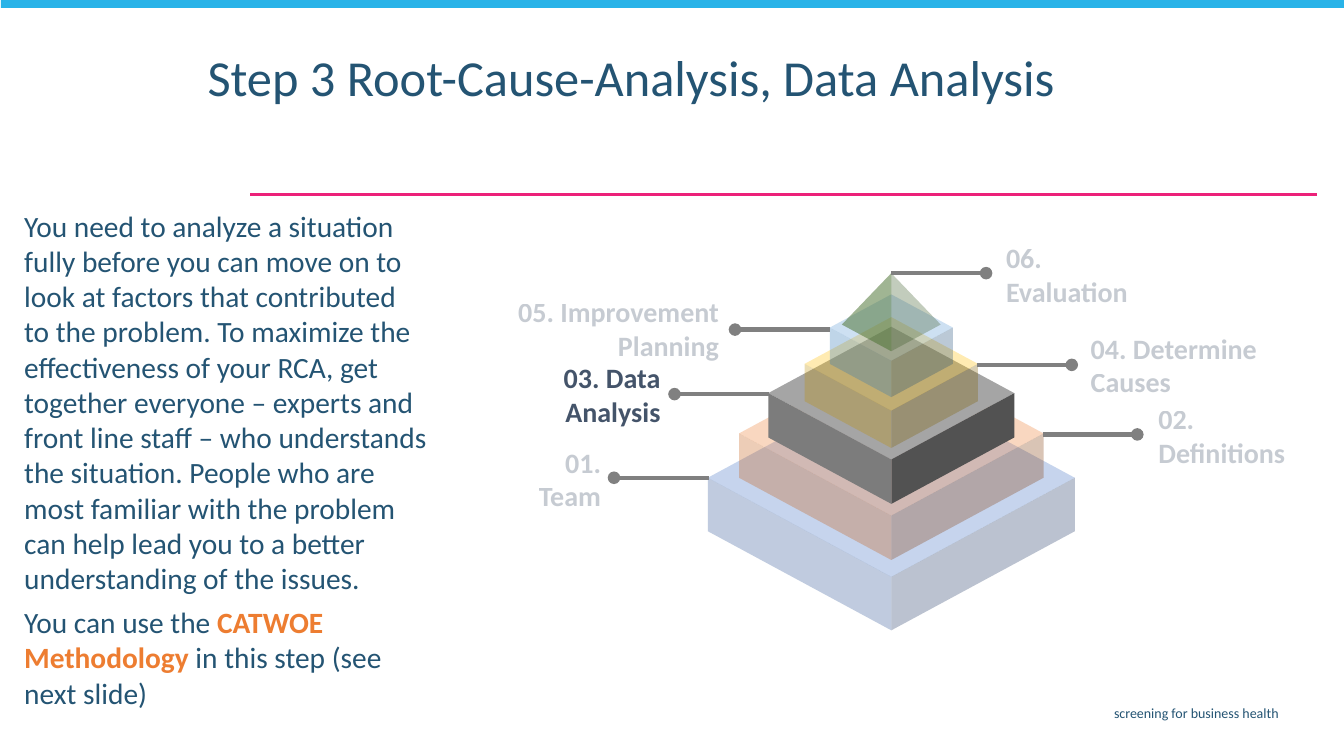
from dataclasses import dataclass

from lxml.etree import SubElement
from pptx import Presentation
from pptx.dml.color import RGBColor
from pptx.enum.shapes import MSO_CONNECTOR as Connector, MSO_SHAPE as Shape
from pptx.enum.text import MSO_ANCHOR as Anchor, PP_ALIGN as Align
from pptx.oxml.ns import qn
from pptx.util import Inches, Pt


@dataclass(frozen=True)
class Theme:
    font: str = "Calibri"
    text: str = "245473"
    accent: str = "ED7D31"
    label: str = "44546A"
    leader: str = "808080"
    bar: str = "29B3E8"
    rule: str = "EC2179"
    apex_front: str = "385723"
    apex_left: str = "548235"
    title_size: int = 36
    body_size: int = 21
    label_size: int = 20
    footer_size: int = 10
    faded: int = 30


@dataclass(frozen=True)
class Layer:
    """One block of the pyramid; half is half its width, middle the height of its side corners."""
    half: float
    middle: float
    depth: float
    top: str
    right: str
    left: str
    opacity: int = 30


@dataclass(frozen=True)
class Callout:
    """A leader starting at offset from the axis, and the label at its far end."""
    text: str
    offset: float
    y: float
    left: float
    top: float
    width: float
    opacity: int = 30


THEME = Theme()
AXIS = 8.84
SLOPE = 0.54
LEADER_LENGTH = 0.94
APEX_TOP, APEX_MIDDLE, APEX_HALF = 2.71, 3.22, 0.49

LAYERS = [
    Layer(1.82, 4.74, 0.53, "4472C4", "203864", "2F5597"),
    Layer(1.51, 4.30, 0.44, "ED7D31", "843C0B", "C55A11"),
    Layer(1.22, 3.90, 0.44, "A5A5A5", "525252", "7C7C7C", 100),
    Layer(0.86, 3.61, 0.37, "FFC000", "806000", "BF9000"),
    Layer(0.61, 3.25, 0.36, "5B9BD5", "1F4E79", "2E75B6"),
]
CALLOUTS = [
    Callout("06. Evaluation", 0, 2.71, 9.88, 2.50, 1.76),
    Callout("04. Determine Causes", 0.85, 3.62, 10.72, 3.40, 2.63),
    Callout("02. Definitions", 1.50, 4.31, 11.39, 4.10, 1.81),
    Callout("01. Team", -1.81, 4.74, 4.86, 4.53, 1.20),
    Callout("03. Data Analysis", -1.21, 3.91, 4.58, 3.69, 2.07, 100),
    Callout("05. Improvement Planning", -0.61, 3.27, 4.10, 3.04, 3.13),
]
BODY = [
    [("You need to analyze a situation fully before you can move on to look at factors "
      "that contributed to the problem. To maximize the effectiveness of your RCA, get "
      "together everyone – experts and front line staff – who understands the situation. "
      "People who are most familiar with the problem can help lead you to a better "
      "understanding of the issues.", False)],
    [("You can use the ", False), ("CATWOE Methodology ", True),
     ("in this step (see next slide)", False)],
]


def set_all(target, values: dict) -> None:
    for name, value in values.items():
        setattr(target, name, value)


def set_opacity(shape, percent: int) -> None:
    """Make every explicit colour of the shape partly transparent."""
    if percent < 100:
        for color in shape.element.iter(qn("a:srgbClr")):
            SubElement(color, qn("a:alpha"), val=str(percent * 1000))


def fill_plain(shape, color: str) -> None:
    shape.shadow.inherit = False
    shape.fill.solid()
    shape.fill.fore_color.rgb = RGBColor.from_string(color)
    shape.line.fill.background()


def add_face(slide, points: list[tuple[float, float]], color: str, opacity: int) -> None:
    corners = [(Inches(x), Inches(y)) for x, y in points]
    builder = slide.shapes.build_freeform(*corners[0], scale=1.0)
    builder.add_line_segments(corners[1:], close=True)
    face = builder.convert_to_shape()
    fill_plain(face, color)
    set_opacity(face, opacity)


def add_line(slide, start: tuple, end: tuple, color: str, width: float, dot: bool = False) -> None:
    line = slide.shapes.add_connector(
        Connector.STRAIGHT, *(Inches(value) for value in (*start, *end)))
    line.line.color.rgb = RGBColor.from_string(color)
    line.line.width = Pt(width)
    properties = line.element.spPr
    if dot:
        SubElement(properties.find(qn("a:ln")), qn("a:tailEnd"), type="oval")
    SubElement(properties, qn("a:effectLst"))


def add_frame(slide, left: float, top: float, width: float, height: float, **values):
    box = slide.shapes.add_textbox(*(Inches(value) for value in (left, top, width, height)))
    set_all(box.text_frame, {"word_wrap": True, **values})
    return box


def add_run(paragraph, text: str, size: int, color: str, bold: bool = False) -> None:
    run = paragraph.add_run()
    run.text = text
    set_all(run.font, {"name": THEME.font, "size": Pt(size), "bold": bold})
    run.font.color.rgb = RGBColor.from_string(color)


def add_layer(slide, layer: Layer) -> None:
    rise = SLOPE * layer.half
    front = layer.middle + rise
    add_face(slide, [(AXIS, layer.middle - rise), (AXIS + layer.half, layer.middle),
                     (AXIS, front), (AXIS - layer.half, layer.middle)],
             layer.top, layer.opacity)
    for side, color in ((1, layer.right), (-1, layer.left)):
        edge = AXIS + side * layer.half
        add_face(slide, [(AXIS, front + layer.depth), (edge, layer.middle + layer.depth),
                         (edge, layer.middle), (AXIS, front)], color, layer.opacity)


def add_apex(slide) -> None:
    tip = (AXIS, APEX_TOP)
    front = (AXIS, APEX_MIDDLE + SLOPE * APEX_HALF)
    left = (AXIS - APEX_HALF, APEX_MIDDLE)
    right = (AXIS + APEX_HALF, APEX_MIDDLE)
    add_face(slide, [tip, right, front, left], THEME.apex_front, THEME.faded)
    add_face(slide, [tip, front, left], THEME.apex_left, THEME.faded)


def add_leader(slide, callout: Callout) -> None:
    side = -1 if callout.offset < 0 else 1
    start = AXIS + callout.offset
    add_line(slide, (start, callout.y), (start + side * LEADER_LENGTH, callout.y),
             THEME.leader, 3, dot=True)


def add_label(slide, callout: Callout) -> None:
    """The wide margin away from the leader breaks the label into two lines."""
    on_left = callout.offset < 0
    outer_margin = "margin_left" if on_left else "margin_right"
    box = add_frame(slide, callout.left, callout.top, callout.width, 0.44,
                    vertical_anchor=Anchor.MIDDLE, **{outer_margin: Inches(0.4)})
    paragraph = box.text_frame.paragraphs[0]
    paragraph.alignment = Align.RIGHT if on_left else Align.LEFT
    add_run(paragraph, callout.text, THEME.label_size, THEME.label, bold=True)
    set_opacity(box, callout.opacity)


def add_texts(slide) -> None:
    footer = add_frame(slide, 3.65, 6.94, 9.13, 0.29).text_frame.paragraphs[0]
    footer.alignment = Align.RIGHT
    add_run(footer, "screening for business health", THEME.footer_size, THEME.text)

    title = add_frame(slide, 1.96, 0.48, 9.68, 0.76).text_frame.paragraphs[0]
    title.line_spacing = 0.9
    add_run(title, "Step 3 Root-Cause-Analysis, Data Analysis", THEME.title_size, THEME.text)

    body = add_frame(slide, 0.15, 2.02, 4.18, 5.4, margin_left=Inches(0.09),
                     margin_right=Inches(0.09), margin_top=Inches(0.04),
                     margin_bottom=Inches(0.04)).text_frame
    for index, runs in enumerate(BODY):
        paragraph = body.add_paragraph() if index else body.paragraphs[0]
        paragraph.space_before = Pt(6 if index else 0)
        for text, strong in runs:
            add_run(paragraph, text, THEME.body_size,
                    THEME.accent if strong else THEME.text, strong)


def main() -> None:
    presentation = Presentation()
    set_all(presentation, {"slide_width": Inches(13.33), "slide_height": Inches(7.5)})
    slide = presentation.slides.add_slide(presentation.slide_layouts[6])

    add_line(slide, (13.06, 1.93), (2.48, 1.93), THEME.rule, 1.5)
    bar = slide.shapes.add_shape(Shape.RECTANGLE, Inches(0.01), Inches(-0.02),
                                 Inches(13.34), Inches(0.1))
    fill_plain(bar, THEME.bar)
    add_texts(slide)
    for layer in LAYERS:
        add_layer(slide, layer)
    add_apex(slide)
    for callout in CALLOUTS:
        add_leader(slide, callout)
    for callout in CALLOUTS:
        add_label(slide, callout)
    presentation.save("out.pptx")


if __name__ == "__main__":
    main()
